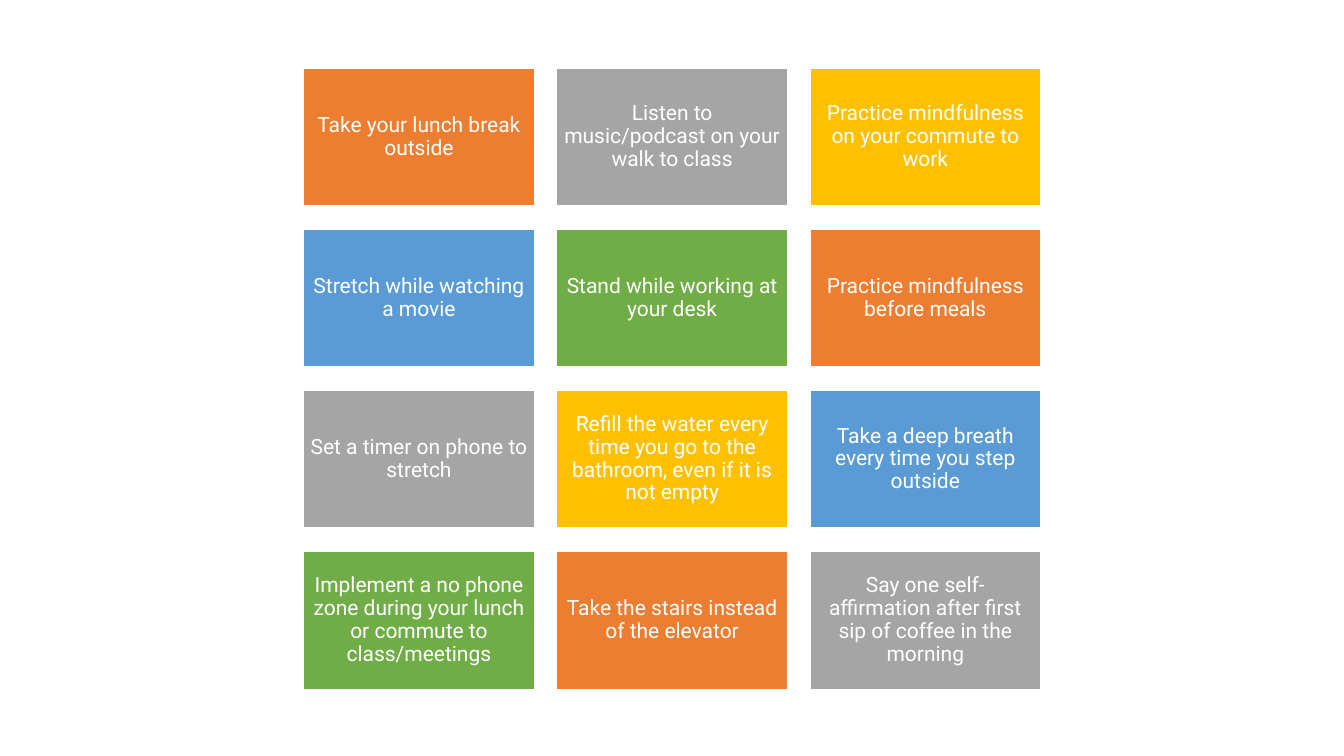
"""Build a slide with a grid of twelve small daily wellness habits."""
from dataclasses import dataclass

import pptx
import pptx.dml.color
import pptx.enum.shapes
import pptx.enum.text
import pptx.slide
import pptx.util

ORANGE, GRAY, GOLD = "ED7D31", "A5A5A5", "FFC000"
BLUE, GREEN, WHITE = "5B9BD5", "70AD47", "FFFFFF"
COLUMNS = 3
GRID_LEFT, GRID_TOP = 7.65, 1.71
TILE_WIDTH, TILE_HEIGHT = 5.82, 3.48
COLUMN_STEP, ROW_STEP = 6.38, 4.06
TILE_INSET = pptx.util.Cm(0.15)


@dataclass(frozen=True)
class Habit:
    wording: str
    fill: str


HABITS = [
    Habit("Take your lunch break outside", ORANGE),
    Habit("Listen to music/podcast on your walk to class", GRAY),
    Habit("Practice mindfulness on your commute to work", GOLD),
    Habit("Stretch while watching a movie", BLUE),
    Habit("Stand while working at your desk", GREEN),
    Habit("Practice mindfulness before meals", ORANGE),
    Habit("Set a timer on phone to stretch", GRAY),
    Habit("Refill the water every time you go to the bathroom, even if it is not empty", GOLD),
    Habit("Take a deep breath every time you step outside", BLUE),
    Habit("Implement a no phone zone during your lunch or commute to class/meetings", GREEN),
    Habit("Take the stairs instead of the elevator", ORANGE),
    Habit("Say one self-affirmation after first sip of coffee in the morning", GRAY),
]


def paint(target: pptx.dml.color.ColorFormat, color: str) -> None:
    target.rgb = pptx.dml.color.RGBColor.from_string(color)


def draw_habit(slide: pptx.slide.Slide, habit: Habit, row: int, column: int) -> None:
    tile = slide.shapes.add_shape(
        pptx.enum.shapes.MSO_SHAPE.RECTANGLE,
        pptx.util.Cm(GRID_LEFT + column * COLUMN_STEP),
        pptx.util.Cm(GRID_TOP + row * ROW_STEP),
        pptx.util.Cm(TILE_WIDTH),
        pptx.util.Cm(TILE_HEIGHT),
    )
    tile.shadow.inherit = False
    tile.fill.solid()
    paint(tile.fill.fore_color, habit.fill)
    tile.line.fill.solid()
    paint(tile.line.color, WHITE)
    tile.line.width = pptx.util.Pt(1)

    frame = tile.text_frame
    frame.word_wrap = True
    frame.vertical_anchor = pptx.enum.text.MSO_ANCHOR.MIDDLE
    frame.margin_left = frame.margin_right = TILE_INSET
    frame.margin_top = frame.margin_bottom = TILE_INSET
    sentence = frame.paragraphs[0]
    sentence.alignment = pptx.enum.text.PP_ALIGN.CENTER
    sentence.line_spacing = 0.9
    wording = sentence.add_run()
    wording.text = habit.wording
    wording.font.name = "Roboto"
    wording.font.size = pptx.util.Pt(15)
    paint(wording.font.color, WHITE)


def main() -> None:
    deck = pptx.Presentation()
    deck.slide_width = pptx.util.Cm(33.87)
    deck.slide_height = pptx.util.Cm(19.05)
    slide = deck.slides.add_slide(deck.slide_layouts[6])
    for index, habit in enumerate(HABITS):
        draw_habit(slide, habit, *divmod(index, COLUMNS))
    deck.save("out.pptx")


if __name__ == "__main__":
    main()
